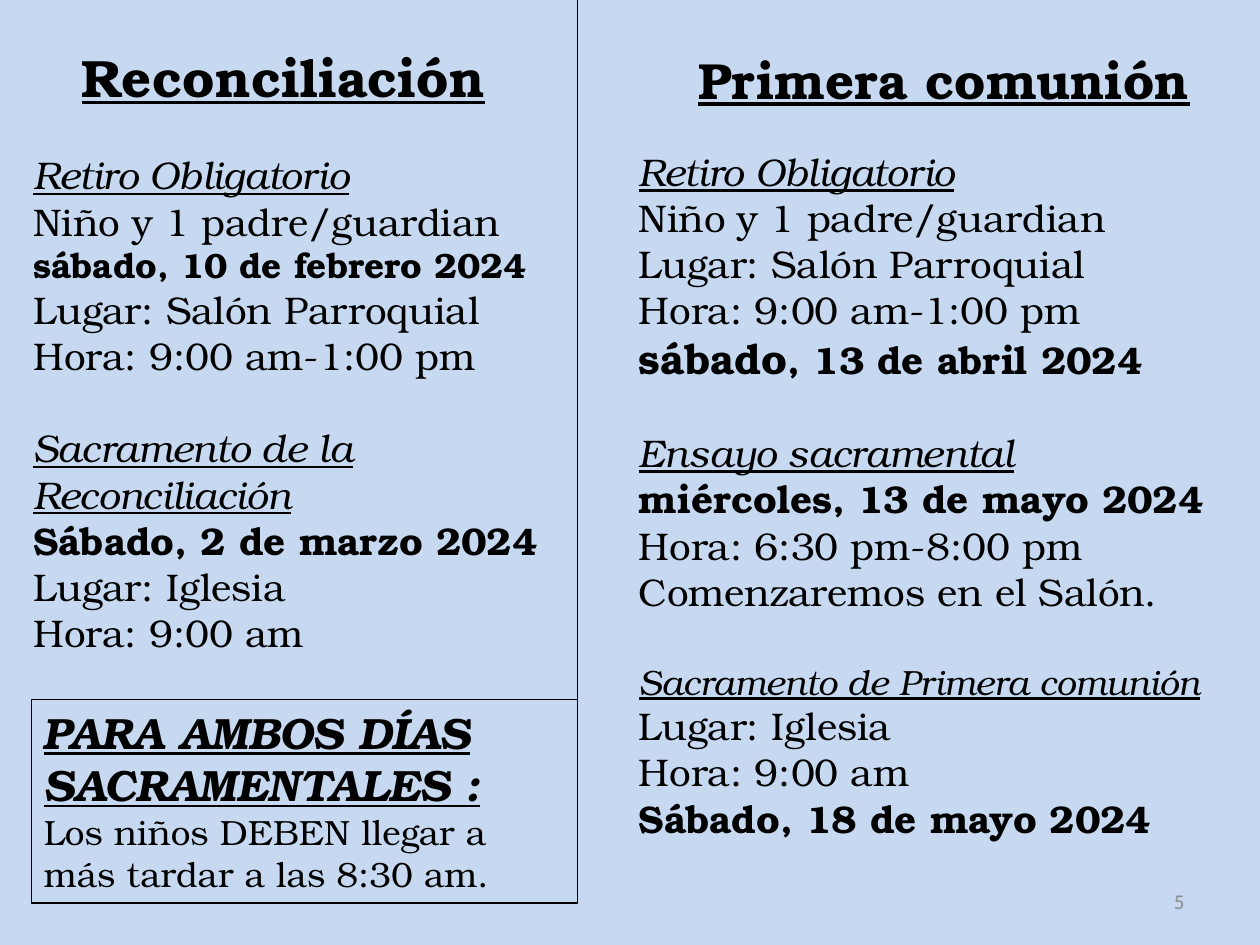
"""Build the slide with the dates of both sacraments."""
from pptx import Presentation
from pptx.dml.color import RGBColor
from pptx.enum.shapes import MSO_CONNECTOR, MSO_SHAPE
from pptx.enum.text import MSO_ANCHOR, MSO_AUTO_SIZE, PP_ALIGN
from pptx.oxml.ns import qn
from pptx.util import Pt

BACKGROUND = RGBColor(0xC6, 0xD9, 0xF1)
BLACK = RGBColor(0, 0, 0)
GRAY = RGBColor(0x8C, 0x8C, 0x8C)
SERIF = "TeX Gyre Bonum"
SECTION_GAP = 26.4

PLAIN = {"name": SERIF, "size": 22, "color": BLACK, "bold": False, "italic": False, "underline": False}
BOLD = {**PLAIN, "bold": True}
HEADING = {**PLAIN, "italic": True, "underline": True}
TITLE = {**BOLD, "size": 30, "underline": True}
NOTICE = {**HEADING, "size": 25, "bold": True}
NUMBER = {**PLAIN, "name": "Calibri", "size": 12, "color": GRAY}

RECONCILIATION = [
    [
        [("Retiro Obligatorio", HEADING)],
        [("Niño y 1 padre/guardian", PLAIN)],
        [("sábado, 10 de febrero 2024", {**BOLD, "size": 20})],
        [("Lugar: Salón Parroquial", PLAIN)],
        [("Hora: 9:00 am-1:00 pm", PLAIN)],
    ],
    [
        [("Sacramento de la Reconciliación", HEADING)],
        [("Sábado, 2 de marzo 2024", BOLD)],
        [("Lugar: Iglesia", PLAIN)],
        [("Hora: 9:00 am", PLAIN)],
    ],
]
COMMUNION = [
    [
        [("Retiro Obligatorio", HEADING)],
        [("Niño y 1 padre/guardian", PLAIN)],
        [("Lugar: Salón Parroquial", PLAIN)],
        [("Hora: 9:00 am-1:00 pm", PLAIN)],
        [("sábado", {**BOLD, "size": 24}), (", 13 de abril 2024", BOLD)],
    ],
    [
        [("Ensayo sacramental", HEADING)],
        [("miércoles, 13 de mayo 2024", BOLD)],
        [("Hora: 6:30 pm-8:00 pm", PLAIN)],
        [("Comenzaremos en el Salón.", PLAIN)],
    ],
    [
        [("Sacramento de Primera comunión", {**HEADING, "size": 20})],
        [("Lugar: Iglesia", PLAIN)],
        [("Hora: 9:00 am", PLAIN)],
        [("Sábado, 18 de mayo 2024", BOLD)],
    ],
]
ARRIVAL = [[
    [("PARA AMBOS DÍAS SACRAMENTALES :", NOTICE)],
    [("Los niños DEBEN llegar a más tardar a las 8:30 am.", {**PLAIN, "size": 20})],
]]


def write(shape, sections, align=PP_ALIGN.LEFT, anchor=MSO_ANCHOR.TOP):
    frame = shape.text_frame
    frame.word_wrap = True
    frame.auto_size = MSO_AUTO_SIZE.NONE
    frame.vertical_anchor = anchor
    paragraph = frame.paragraphs[0]
    for s, section in enumerate(sections):
        for n, line in enumerate(section):
            if s or n:
                paragraph = frame.add_paragraph()
            paragraph.alignment = align
            paragraph.space_before = Pt(SECTION_GAP if s and not n else 0)
            for text, style in line:
                run = paragraph.add_run()
                run.text = text
                for key, value in style.items():
                    if key == "color":
                        run.font.color.rgb = value
                    else:
                        setattr(run.font, key, Pt(value) if key == "size" else value)


def add_text(slide, bounds, sections, **layout):
    write(slide.shapes.add_textbox(*map(Pt, bounds)), sections, **layout)


def outline(line):
    line.color.rgb = BLACK
    line.width = Pt(0.75)


def main():
    deck = Presentation()
    deck.slide_width, deck.slide_height = Pt(720), Pt(540)
    slide = deck.slides.add_slide(deck.slide_layouts[5])
    slide.background.fill.solid()
    slide.background.fill.fore_color.rgb = BACKGROUND

    centered = {"align": PP_ALIGN.CENTER, "anchor": MSO_ANCHOR.MIDDLE}
    title = slide.shapes.title
    title.left, title.top, title.width, title.height = map(Pt, (0, 6, 324, 75.6))
    write(title, [[[("Reconciliación", TITLE)]]], **centered)

    add_text(slide, (12, 83, 324, 298), RECONCILIATION)
    add_text(slide, (358, 81, 360, 407), COMMUNION)
    add_text(slide, (358.5, 7.2, 362, 75.6), [[[("Primera comunión", {**TITLE, "size": 29})]]], **centered)

    box_left, box_top, divider_x = 18, 399.6, 330
    arrival = slide.shapes.add_shape(
        MSO_SHAPE.RECTANGLE, Pt(box_left), Pt(box_top), Pt(divider_x - box_left), Pt(116.4))
    arrival.shadow.inherit = False
    arrival.fill.background()
    outline(arrival.line)
    write(arrival, ARRIVAL)

    divider = slide.shapes.add_connector(
        MSO_CONNECTOR.STRAIGHT, Pt(divider_x), Pt(0), Pt(divider_x), Pt(box_top))
    outline(divider.line)
    properties = divider._element.spPr
    properties.append(properties.makeelement(qn("a:effectLst"), {}))

    add_text(slide, (516, 500.5, 168, 28.75), [[[("5", NUMBER)]]],
             align=PP_ALIGN.RIGHT, anchor=MSO_ANCHOR.MIDDLE)
    deck.save("out.pptx")


if __name__ == "__main__":
    main()
